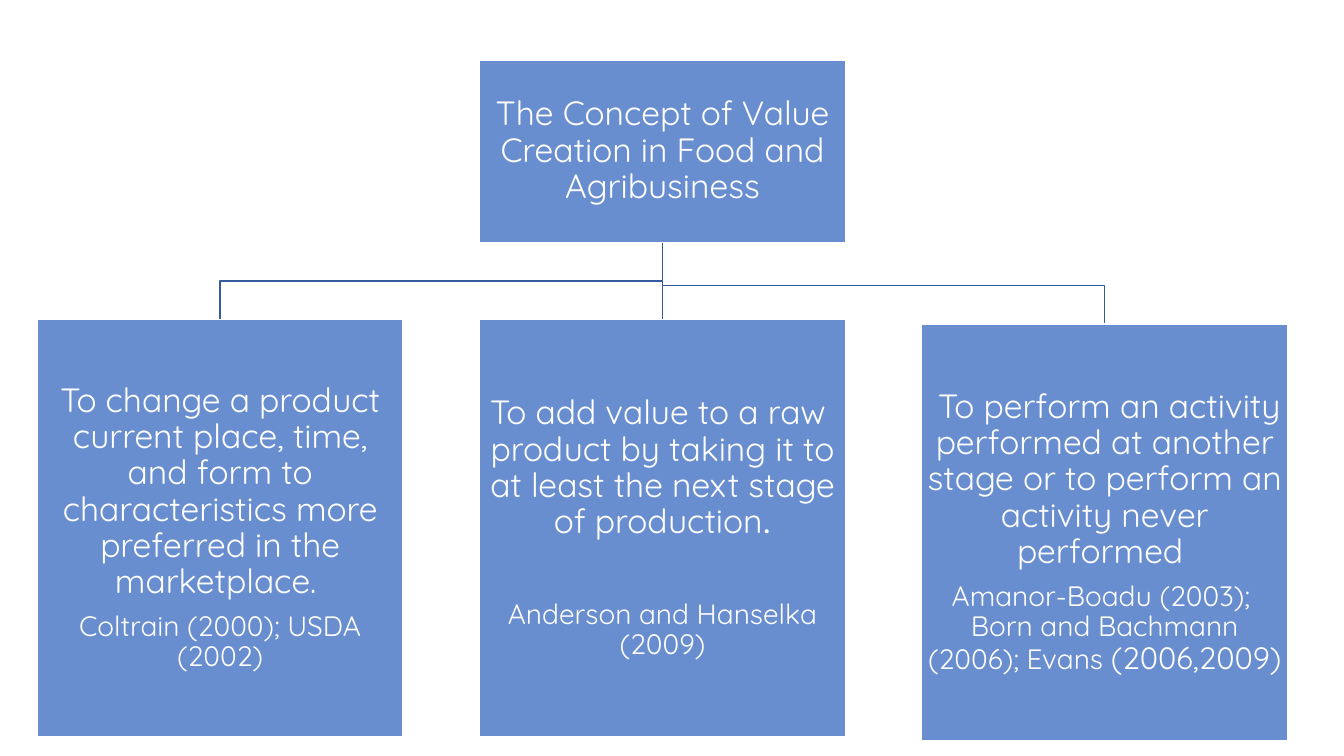
from dataclasses import dataclass

from lxml.etree import SubElement
from pptx import Presentation
from pptx.dml.color import RGBColor
from pptx.enum.shapes import MSO_CONNECTOR, MSO_SHAPE
from pptx.enum.text import MSO_ANCHOR, PP_ALIGN
from pptx.oxml.ns import qn
from pptx.util import Pt


@dataclass(frozen=True)
class Theme:
    fill: RGBColor = RGBColor(0x44, 0x72, 0xC4)
    opacity: int = 80
    line: RGBColor = RGBColor(0x36, 0x5B, 0x9D)
    white: RGBColor = RGBColor(0xFF, 0xFF, 0xFF)
    font: str = "Quicksand"
    stop_font: str = "Calibri"
    statement: int = 24
    late_years: int = 22
    citation: int = 20
    line_width: int = 1


THEME = Theme()

# A box holds paragraphs: (space after, runs); a run is (text, size, font).
ROOT = [
    (8.4, [("The Concept of Value Creation in Food and Agribusiness", THEME.statement, THEME.font)]),
]
CHILDREN = [
    [
        (8.4, [("To change a product current place, time, and form to characteristics more\n"
                "preferred in the marketplace. ", THEME.statement, THEME.font)]),
        (7, [("Coltrain (2000); USDA (2002)", THEME.citation, THEME.font)]),
    ],
    [
        (42, [("To add value to a raw \nproduct by taking it to at least the next stage\n"
               "of production", THEME.statement, THEME.font),
              (".", THEME.statement, THEME.stop_font)]),
        (7, [("Anderson and Hanselka (2009)", THEME.citation, THEME.font)]),
    ],
    [
        (8.4, [(" To perform an activity performed at another stage or to perform an\n"
                "activity never performed ", THEME.statement, THEME.font)]),
        (7, [("Amanor-Boadu (2003); \nBorn and Bachmann (2006); Evans ", THEME.citation, THEME.font),
             ("(2006,2009)", THEME.late_years, THEME.font)]),
    ],
]

SLIDE_WIDTH, SLIDE_HEIGHT = 960, 540
BOX_WIDTH, ROOT_HEIGHT, CHILD_HEIGHT = 261.4, 130.4, 298
LEFT, PITCH = 26.6, 315.9
ROOT_TOP = 42.8
CHILD_TOPS = [228.2, 228.2, 231.4]
ELBOW_RISE = 27.4
INSET = 1.5


def add_box(page, paragraphs, left, top, height):
    box = page.shapes.add_shape(MSO_SHAPE.RECTANGLE, Pt(left), Pt(top), Pt(BOX_WIDTH), Pt(height))
    box.shadow.inherit = False
    box.fill.solid()
    box.fill.fore_color.rgb = THEME.fill
    color = box.fill._xPr.find(qn("a:solidFill"))[0]
    SubElement(color, qn("a:alpha"), val=str(THEME.opacity * 1000))
    box.line.color.rgb = THEME.white
    box.line.width = Pt(THEME.line_width)

    frame = box.text_frame
    frame.word_wrap = True
    frame.vertical_anchor = MSO_ANCHOR.MIDDLE
    frame.margin_left = frame.margin_right = frame.margin_top = frame.margin_bottom = Pt(INSET)
    for index, (space_after, runs) in enumerate(paragraphs):
        para = frame.add_paragraph() if index else frame.paragraphs[0]
        para.alignment = PP_ALIGN.CENTER
        para.line_spacing = 0.9
        para.space_after = Pt(space_after)
        para.font.color.rgb = THEME.white
        for text, size, font in runs:
            for line_index, line in enumerate(text.split("\n")):
                if line_index:
                    para.add_line_break()
                span = para.add_run()
                span.text = line
                span.font.size = Pt(size)
                span.font.name = font
                span.font.color.rgb = THEME.white


def add_branch(page, start_x, start_y, end_x, end_y):
    """Join the root to a child: straight when aligned, stepped otherwise."""
    if start_x == end_x:
        branch = page.shapes.add_connector(
            MSO_CONNECTOR.STRAIGHT, Pt(start_x), Pt(start_y), Pt(end_x), Pt(end_y))
        SubElement(branch._element.spPr, qn("a:effectLst"))
    else:
        bend_y = end_y - ELBOW_RISE
        builder = page.shapes.build_freeform(Pt(start_x), Pt(start_y))
        corners = [(start_x, bend_y), (end_x, bend_y), (end_x, end_y)]
        builder.add_line_segments([(Pt(x), Pt(y)) for x, y in corners], close=False)
        branch = builder.convert_to_shape()
        branch.fill.background()
        branch.shadow.inherit = False
    branch.line.color.rgb = THEME.line
    branch.line.width = Pt(THEME.line_width)


def main():
    deck = Presentation()
    deck.slide_width, deck.slide_height = Pt(SLIDE_WIDTH), Pt(SLIDE_HEIGHT)
    page = deck.slides.add_slide(deck.slide_layouts[6])

    lefts = [LEFT + PITCH * column for column in range(len(CHILDREN))]
    root_left = lefts[1]
    half = BOX_WIDTH / 2
    for left, top in reversed(list(zip(lefts, CHILD_TOPS))):
        add_branch(page, root_left + half, ROOT_TOP + ROOT_HEIGHT, left + half, top)
    add_box(page, ROOT, root_left, ROOT_TOP, ROOT_HEIGHT)
    for paragraphs, left, top in zip(CHILDREN, lefts, CHILD_TOPS):
        add_box(page, paragraphs, left, top, CHILD_HEIGHT)

    deck.save("out.pptx")


if __name__ == "__main__":
    main()
